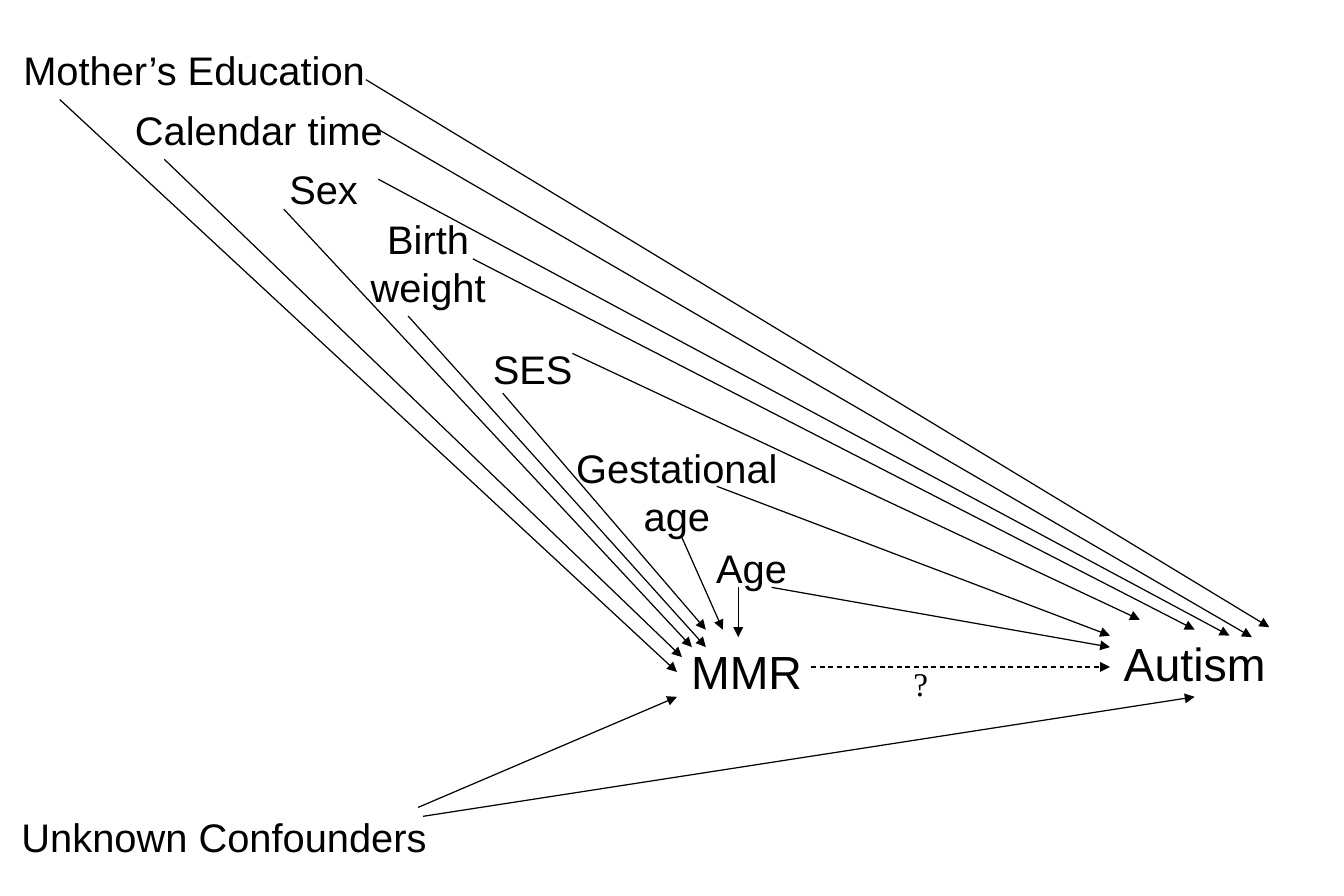
from dataclasses import dataclass

from lxml.etree import SubElement
from pptx import Presentation
from pptx.dml.color import RGBColor
from pptx.enum.dml import MSO_LINE_DASH_STYLE as Dash
from pptx.enum.shapes import MSO_CONNECTOR as Connector
from pptx.enum.text import PP_ALIGN as Align
from pptx.oxml.ns import qn
from pptx.util import Inches, Pt


@dataclass(frozen=True)
class Theme:
    ink: RGBColor = RGBColor(0, 0, 0)
    sans: str = "Arial"
    serif: str = "Times New Roman"
    outcome_size: int = 28
    factor_size: int = 24
    mark_size: int = 20
    line_width: float = 0.75


THEME = Theme()
COLUMNS, ROWS = 270, 180  # grid units across and down the slide
LINE, TWO_LINES = 12, 21.6  # label heights in rows

# Label, its box, and the arrows from it to MMR and to Autism, in grid units
FACTORS = [
    ("Mother’s Education", (2, 8, 74, LINE),
     (12, 20, 136, 135), (73.5, 16, 255, 126)),
    ("Calendar time", (15, 20, 74, LINE),
     (33, 32, 137, 132), (76, 26, 251.5, 128)),
    ("Sex", (45, 32, 40, LINE),
     (57, 42, 139, 130), (76, 36, 247, 127.7)),
    ("Birth weight", (67, 42, 38, TWO_LINES),
     (82, 63.5, 141.8, 130), (95, 52, 240, 126.5)),
    ("SES", (91, 68, 32, LINE),
     (101, 79, 141.8, 126.5), (115, 71, 229, 124.5)),
    ("Gestational age", (113, 88, 46, TWO_LINES),
     (137, 108, 145.2, 126.5), (144, 97.7, 223, 127.7)),
    ("Age", (139, 108, 24, LINE),
     (148.3, 118, 148.3, 128), (155, 118, 223, 130)),
    ("Unknown Confounders", (-7, 162, 104, LINE),
     (84, 162.2, 136, 140), (85, 164, 240, 140)),
]


class Grid:
    """Turns columns and rows into lengths inside a box."""

    def __init__(self, left, top, width, height):
        self.left, self.top = left, top
        self.column, self.row = width / COLUMNS, height / ROWS

    def point(self, x, y):
        return round(self.left + x * self.column), round(self.top + y * self.row)

    def size(self, width, height):
        return round(width * self.column), round(height * self.row)


def add_label(page, grid, text, area, size, font=THEME.sans):
    left, top, width, height = area
    box = page.shapes.add_textbox(*grid.point(left, top), *grid.size(width, height))
    box.text_frame.word_wrap = True
    box.text_frame.text = text
    para = box.text_frame.paragraphs[0]
    para.alignment = Align.CENTER
    span = para.runs[0]
    span.font.name = font
    span.font.size = Pt(size)
    span.font.color.rgb = THEME.ink


def add_arrow(page, grid, ends, dash=None):
    x1, y1, x2, y2 = ends
    arrow = page.shapes.add_connector(
        Connector.STRAIGHT, *grid.point(x1, y1), *grid.point(x2, y2))
    arrow.line.color.rgb = THEME.ink
    arrow.line.width = Pt(THEME.line_width)
    if dash:
        arrow.line.dash_style = dash
    # Arrowhead, and no shadow
    SubElement(arrow.line._get_or_add_ln(), qn("a:tailEnd"), type="triangle")
    SubElement(arrow._element.spPr, qn("a:effectLst"))


def add_factors(page, grid):
    for text, area, to_vaccine, to_autism in FACTORS:
        add_label(page, grid, text, area, THEME.factor_size)
        add_arrow(page, grid, to_vaccine)
        add_arrow(page, grid, to_autism)


def add_question(page, grid):
    add_label(page, grid, "MMR", (119, 128, 62, 13.7), THEME.outcome_size)
    add_label(page, grid, "Autism", (209, 126.5, 62, 13.7), THEME.outcome_size)
    add_arrow(page, grid, (163, 134, 223, 134), Dash.DASH)
    add_label(page, grid, "?", (173, 132, 24, 10.3), THEME.mark_size, THEME.serif)


def main():
    deck = Presentation()
    deck.slide_width, deck.slide_height = Inches(11.25), Inches(7.5)
    page = deck.slides.add_slide(deck.slide_layouts.get_by_name("Blank"))
    grid = Grid(0, 0, deck.slide_width, deck.slide_height)
    add_question(page, grid)
    add_factors(page, grid)
    deck.save("out.pptx")


if __name__ == "__main__":
    main()
